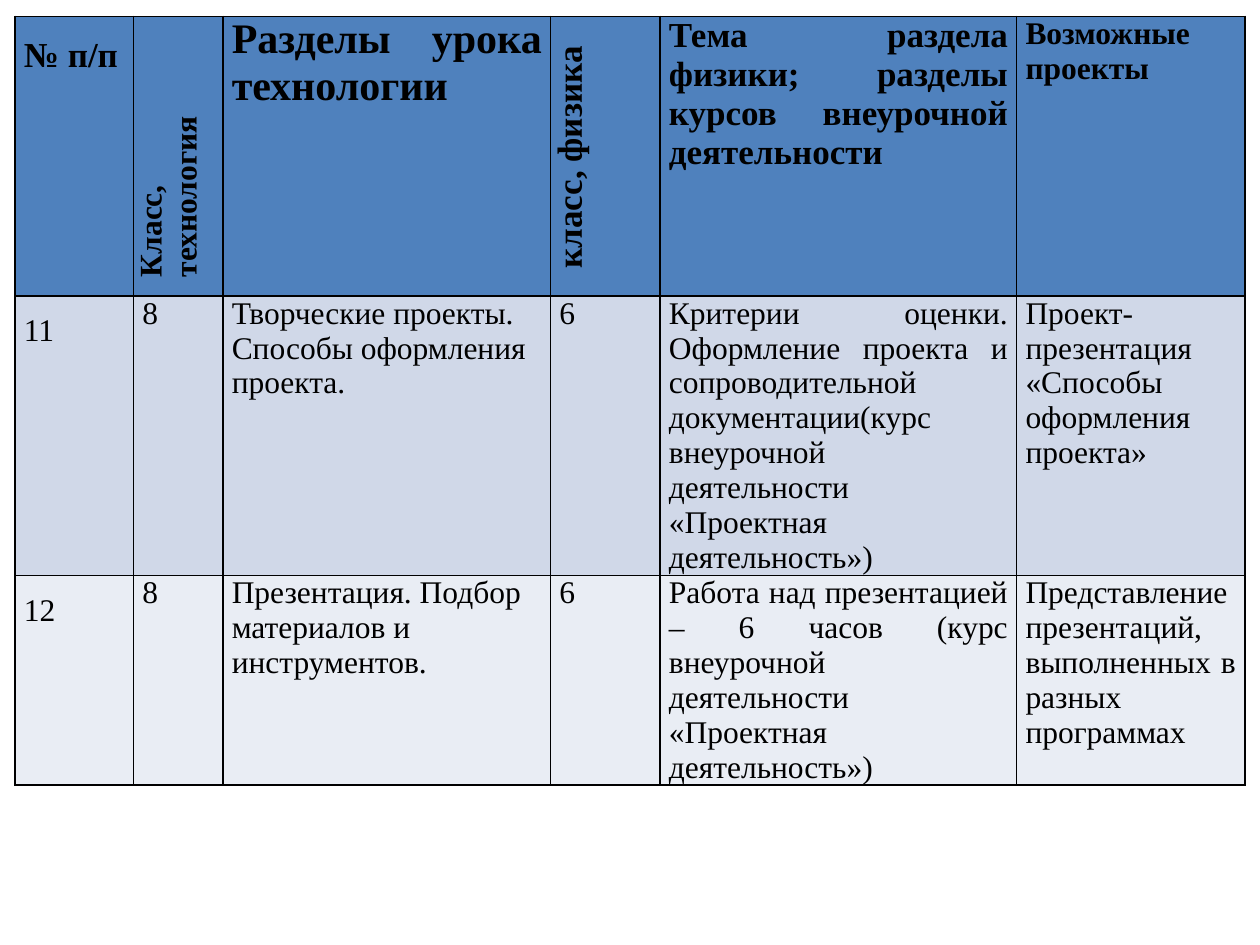
"""Build a slide with a table linking technology lessons to physics topics."""
from dataclasses import dataclass

from lxml.etree import SubElement
from pptx import Presentation
from pptx.dml.color import RGBColor
from pptx.enum.text import PP_ALIGN
from pptx.oxml.ns import qn
from pptx.table import _Cell
from pptx.util import Inches, Pt


@dataclass(frozen=True)
class Theme:
    font: str = "Times New Roman"
    ink: str = "000000"
    header_fill: str = "4F81BD"
    row_fills: tuple[str, ...] = ("D0D8E8", "E9EDF4")
    body_size: int = 18
    heading_size: int = 20
    large_size: int = 24
    border_width: int = 1


@dataclass(frozen=True)
class Column:
    heading: str
    width: float
    size: int
    vertical: bool = False
    spacing: float | None = None
    body_align: PP_ALIGN = PP_ALIGN.JUSTIFY


THEME = Theme()
COLUMNS = (
    Column("№ п/п", 0.94, THEME.heading_size, spacing=1.5),
    Column("Класс, технология", 0.71, THEME.body_size, vertical=True),
    Column("Разделы урока технологии", 2.6, THEME.large_size, body_align=PP_ALIGN.LEFT),
    Column(" класс, физика", 0.87, THEME.heading_size, vertical=True),
    Column("Тема раздела физики; разделы курсов внеурочной деятельности", 2.83,
           THEME.heading_size),
    Column("Возможные проекты", 1.81, THEME.body_size),
)
LESSONS = (
    ("11", "8", "Творческие проекты. Способы оформления проекта.", "6",
     "Критерии оценки. Оформление проекта и сопроводительной документации"
     "(курс внеурочной деятельности «Проектная деятельность»)",
     "Проект-презентация «Способы оформления проекта»"),
    ("12", "8", "Презентация. Подбор материалов и инструментов.", "6",
     "Работа над презентацией – 6 часов (курс внеурочной деятельности "
     "«Проектная деятельность»)",
     "Представление презентаций, выполненных в разных программах"),
)
ROW_HEIGHTS = (2.22, 2.22, 1.66)


def add_borders(cell: _Cell) -> None:
    """Outline all four sides of a cell."""
    properties = cell._tc.get_or_add_tcPr()
    for side in ("a:lnL", "a:lnR", "a:lnT", "a:lnB"):
        line = SubElement(properties, qn(side), w=str(Pt(THEME.border_width)))
        fill = SubElement(line, qn("a:solidFill"))
        SubElement(fill, qn("a:srgbClr"), val=THEME.ink)


def write_cell(cell: _Cell, text: str, *, fill: str, size: int, bold: bool = False,
               align: PP_ALIGN = PP_ALIGN.JUSTIFY, spacing: float | None = None,
               vertical: bool = False) -> None:
    """Fill a cell with formatted text."""
    cell.margin_left = cell.margin_right = Inches(0.07)
    cell.margin_top = cell.margin_bottom = Inches(0)
    add_borders(cell)
    cell.fill.solid()
    cell.fill.fore_color.rgb = RGBColor.from_string(fill)
    paragraph = cell.text_frame.paragraphs[0]
    paragraph.alignment = align
    if spacing:
        paragraph.line_spacing = spacing
    if vertical:
        cell._tc.get_or_add_tcPr().set("vert", "vert270")
        paragraph._p.get_or_add_pPr().set("marL", str(Inches(0.08)))
    run = paragraph.add_run()
    run.text = text
    run.font.name = THEME.font
    run.font.size = Pt(size)
    run.font.bold = bold
    run.font.color.rgb = RGBColor.from_string(THEME.ink)


def main() -> None:
    """Create the presentation and save it."""
    presentation = Presentation()
    presentation.slide_width, presentation.slide_height = Inches(10), Inches(7.5)
    slide = presentation.slides.add_slide(presentation.slide_layouts[6])
    table = slide.shapes.add_table(
        len(ROW_HEIGHTS), len(COLUMNS), Inches(0.12), Inches(0.13),
        Inches(sum(column.width for column in COLUMNS)), Inches(sum(ROW_HEIGHTS)),
    ).table
    table.first_row = table.horz_banding = False
    for row, height in zip(table.rows, ROW_HEIGHTS):
        row.height = Inches(height)
    for index, column in enumerate(COLUMNS):
        table.columns[index].width = Inches(column.width)
        write_cell(table.cell(0, index), column.heading, fill=THEME.header_fill,
                   size=column.size, bold=True, spacing=column.spacing,
                   vertical=column.vertical)
        for number, (lesson, fill) in enumerate(zip(LESSONS, THEME.row_fills), start=1):
            write_cell(table.cell(number, index), lesson[index], fill=fill,
                       size=THEME.body_size, align=column.body_align,
                       spacing=column.spacing)
    presentation.save("out.pptx")


if __name__ == "__main__":
    main()
